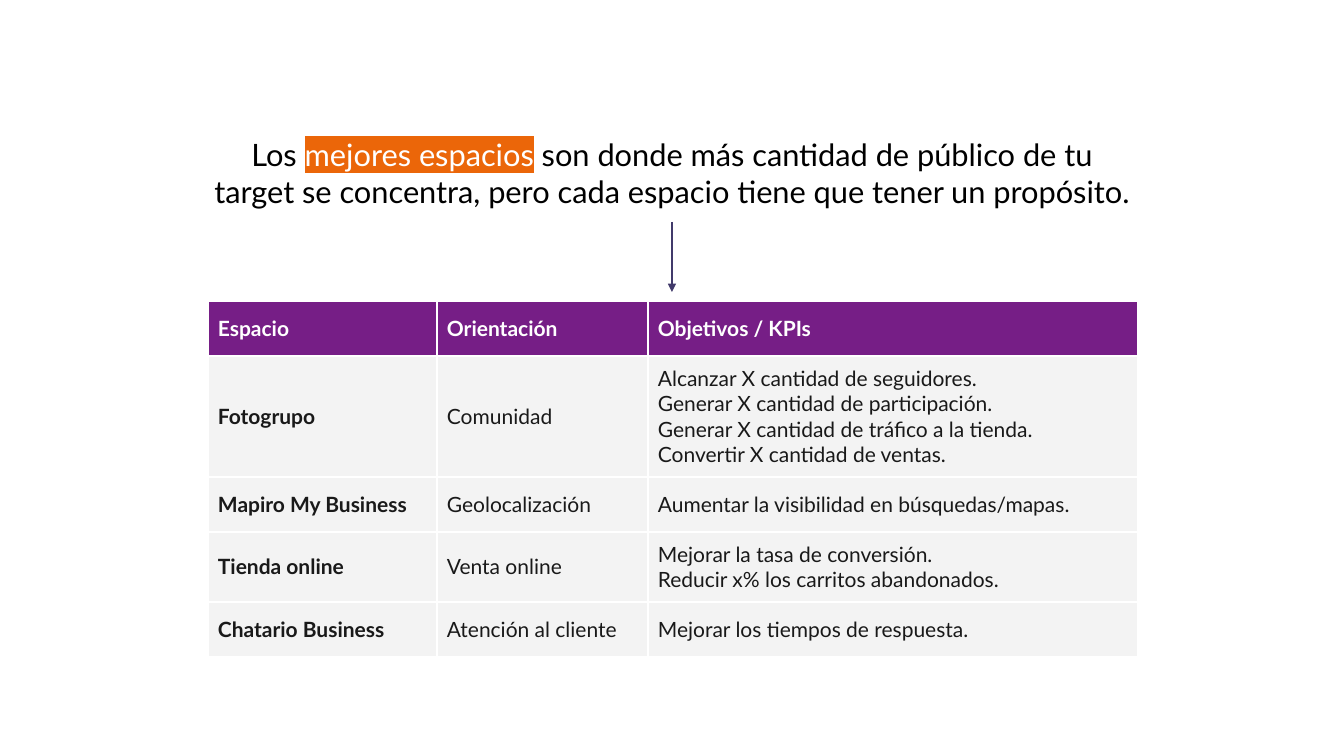
from lxml import etree
from pptx import Presentation
from pptx import util as u
from pptx.dml.color import RGBColor
from pptx.enum import shapes, text
from pptx.oxml import parse_xml
from pptx.oxml.ns import qn

INK = {"white": "FFFFFF", "black": "000000", "dark": "191919", "head": "761E86",
       "body": "F3F3F3", "mark": "EB6609", "arrow": "413A6B"}
FACE = "Lato"
SIZE = (1344, 756)
TITLE = [
    ("Los ", "black", None),
    ("mejores espacios", "white", "mark"),
    (" son donde más cantidad de público de tu target se concentra, "
     "pero cada espacio tiene que tener un propósito.", "black", None),
]
ROWS = [
    ("Espacio", "Orientación", "Objetivos / KPIs"),
    ("Fotogrupo", "Comunidad",
     "Alcanzar X cantidad de seguidores.\n"
     "Generar X cantidad de participación.\n"
     "Generar X cantidad de tráfico a la tienda.\n"
     "Convertir X cantidad de ventas."),
    ("Mapiro My Business", "Geolocalización", "Aumentar la visibilidad en búsquedas/mapas."),
    ("Tienda online", "Venta online",
     "Mejorar la tasa de conversión.\nReducir x% los carritos abandonados."),
    ("Chatario Business", "Atención al cliente", "Mejorar los tiempos de respuesta."),
]
WIDE = (229, 211, 490)
HIGH = 55
LEFT, TOP = 208, 301
BOX = (204, 126, 936, 95)
ARROW = (672, 222, 672, 292)
PAD = 10
NS = 'xmlns:a="http://schemas.openxmlformats.org/drawingml/2006/main"'


def px(n):
    return u.Inches(n / 100.8)


def rgb(name):
    return RGBColor.from_string(INK[name])


def style(run, tone, mark=None, **form):
    run.font.color.rgb = rgb(tone)
    if mark:
        run.font._element.append(parse_xml(
            f'<a:highlight {NS}><a:srgbClr val="{INK[mark]}"/></a:highlight>'))
    for key, val in {"name": FACE, **form}.items():
        setattr(run.font, key, val)


def inset(part):
    for side in ("left", "right", "top", "bottom"):
        setattr(part, f"margin_{side}", px(PAD))


def edge(cell):
    prop = cell._tc.get_or_add_tcPr()
    for side in "LRTB":
        prop.append(parse_xml(
            f'<a:ln{side} {NS} w="{u.Pt(1.5)}"><a:solidFill>'
            f'<a:srgbClr val="{INK["white"]}"/></a:solidFill></a:ln{side}>'))


def add_grid(slide):
    grid = slide.shapes.add_table(
        len(ROWS), len(WIDE), px(LEFT), px(TOP),
        px(sum(WIDE)), px(HIGH * len(ROWS))).table
    for col, wide in zip(grid.columns, WIDE):
        col.width = px(wide)
    for r, row in enumerate(ROWS):
        grid.rows[r].height = px(HIGH)
        for c, words in enumerate(row):
            cell = grid.cell(r, c)
            inset(cell)
            edge(cell)
            cell.vertical_anchor = text.MSO_ANCHOR.MIDDLE
            cell.fill.solid()
            cell.fill.fore_color.rgb = rgb("body" if r else "head")
            cell.text = words
            for para in cell.text_frame.paragraphs:
                style(para.runs[0], "dark" if r else "white",
                      size=u.Pt(15), bold=r == 0 or c == 0)


def add_title(slide):
    frame = slide.shapes.add_textbox(*map(px, BOX)).text_frame
    frame.word_wrap = True
    frame.auto_size = text.MSO_AUTO_SIZE.SHAPE_TO_FIT_TEXT
    inset(frame)
    para = frame.paragraphs[0]
    para.alignment = text.PP_ALIGN.CENTER
    for words, tone, mark in TITLE:
        run = para.add_run()
        run.text = words
        style(run, tone, mark, size=u.Pt(22))


def add_arrow(slide):
    arrow = slide.shapes.add_connector(shapes.MSO_CONNECTOR.STRAIGHT, *map(px, ARROW))
    arrow.line.color.rgb = rgb("arrow")
    arrow.line.width = u.Pt(1.5)
    etree.SubElement(arrow.line._get_or_add_ln(), qn("a:tailEnd"), type="triangle")
    etree.SubElement(arrow._element.spPr, qn("a:effectLst"))


def main():
    deck = Presentation()
    deck.slide_width, deck.slide_height = map(px, SIZE)
    slide = deck.slides.add_slide(deck.slide_layouts[6])
    add_grid(slide)
    add_title(slide)
    add_arrow(slide)
    deck.save("out.pptx")


if __name__ == "__main__":
    main()
